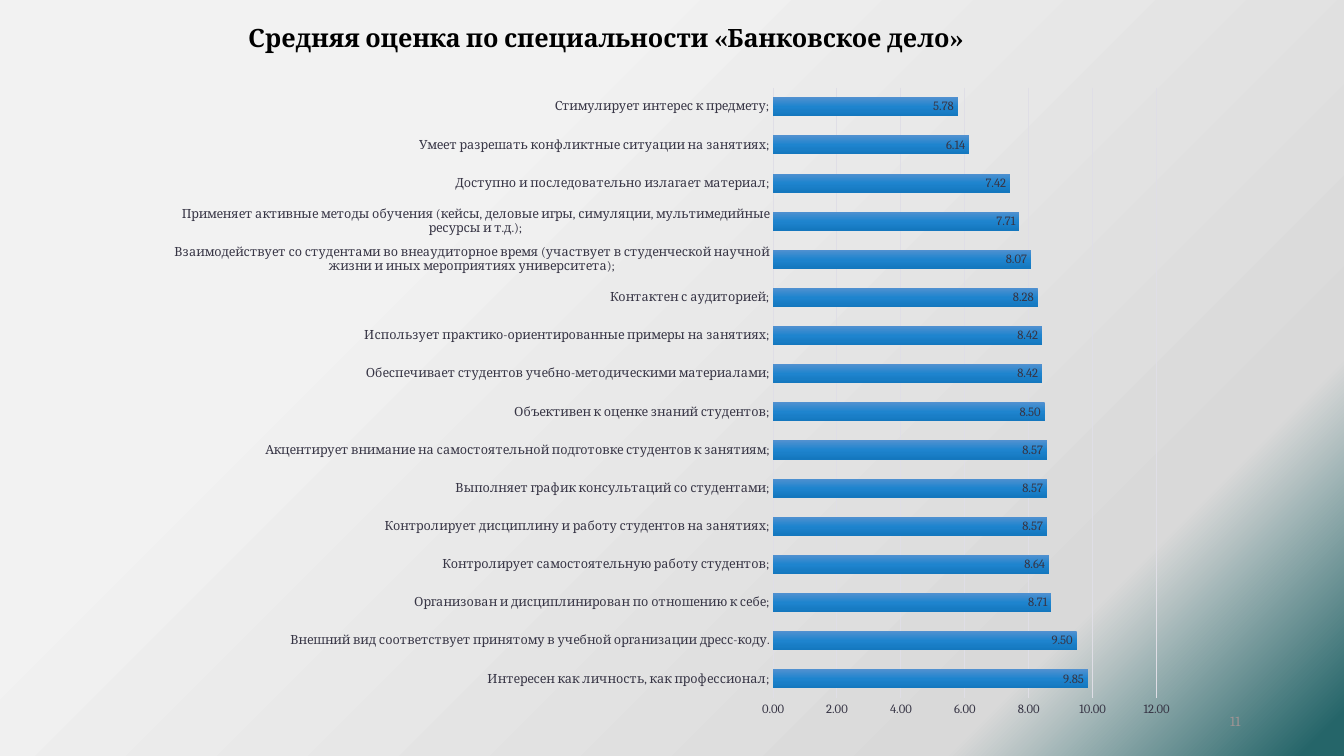
from pptx import Presentation
from pptx.chart.data import CategoryChartData
from pptx.dml.color import RGBColor
from pptx.enum.chart import XL_CHART_TYPE, XL_LABEL_POSITION, XL_TICK_MARK
from pptx.enum.text import MSO_ANCHOR, PP_ALIGN
from pptx.oxml import parse_xml
from pptx.oxml.ns import nsdecls
from pptx.util import Inches, Pt

FONT = "Cambria"
TEXT_COLOR = "373545"
GRID_COLOR = "DFDEE6"
SCORE_FORMAT = "0.00"

SCORES = [
    ("Интересен как личность, как профессионал;", 9.85),
    ("Внешний вид соответствует принятому в учебной организации дресс-коду.", 9.5),
    ("Организован и дисциплинирован по отношению к себе;", 8.71),
    ("Контролирует самостоятельную работу студентов;", 8.64),
    ("Контролирует дисциплину и работу студентов на занятиях;", 8.57),
    ("Выполняет график консультаций со студентами;", 8.57),
    ("Акцентирует внимание на самостоятельной подготовке студентов к занятиям;", 8.57),
    ("Объективен к оценке знаний студентов;", 8.5),
    ("Обеспечивает студентов учебно-методическими материалами;", 8.42),
    ("Использует практико-ориентированные примеры на занятиях;", 8.42),
    ("Контактен с аудиторией;", 8.28),
    ("Взаимодействует со студентами во внеаудиторное время (участвует в студенческой "
     "научной жизни и иных мероприятиях университета);", 8.07),
    ("Применяет активные методы обучения (кейсы, деловые игры, симуляции, "
     "мультимедийные ресурсы и т.д.);", 7.71),
    ("Доступно и последовательно излагает материал;", 7.42),
    ("Умеет разрешать конфликтные ситуации на занятиях;", 6.14),
    ("Стимулирует интерес к предмету;", 5.78),
]


def rgb(color):
    return RGBColor.from_string(color)


def style_font(font, size, color=TEXT_COLOR, bold=False):
    font.name = FONT
    font.size = Pt(size)
    font.bold = bold
    font.color.rgb = rgb(color)


def style_line(line, color):
    line.color.rgb = rgb(color)
    line.width = Pt(0.75)


def gradient_xml(stops, direction):
    stop_xml = "".join(
        f'<a:gs pos="{percent * 1000}"><a:srgbClr val="{color}"/></a:gs>'
        for percent, color in stops
    )
    return (f'<a:gradFill {nsdecls("a")} rotWithShape="1">'
            f"<a:gsLst>{stop_xml}</a:gsLst>{direction}</a:gradFill>")


def set_background(slide):
    gradient = gradient_xml(
        [(1, "F2F2F2"), (29, "F2F2F2"), (81, "D9D9D9"), (98, "256569")],
        '<a:path path="circle"><a:fillToRect r="100000" b="100000"/></a:path>',
    )
    background = parse_xml(
        f'<p:bg {nsdecls("p")}><p:bgPr>{gradient}'
        f'<a:effectLst {nsdecls("a")}/></p:bgPr></p:bg>'
    )
    slide.element.cSld.insert(0, background)


def write_text(shape, text, size, color, align, bold=False):
    frame = shape.text_frame
    frame.text = text
    frame.word_wrap = True
    frame.vertical_anchor = MSO_ANCHOR.MIDDLE
    paragraph = frame.paragraphs[0]
    paragraph.alignment = align
    paragraph.line_spacing = 0.9
    style_font(paragraph.runs[0].font, size, color, bold)


def add_title(slide, text):
    title = slide.shapes.title
    title.left, title.top = Inches(0.33), Inches(0.19)
    title.width, title.height = Inches(11.36), Inches(0.41)
    write_text(title, text, 18, "000000", PP_ALIGN.CENTER, bold=True)


def add_page_number(slide, number):
    page_number = slide.shapes.add_textbox(
        Inches(11.4), Inches(7), Inches(1), Inches(0.33))
    write_text(page_number, number, 10, "A09494", PP_ALIGN.RIGHT)


def style_axis(axis):
    axis.major_tick_mark = axis.minor_tick_mark = XL_TICK_MARK.NONE
    style_font(axis.tick_labels.font, 9)


def add_score_chart(slide):
    data = CategoryChartData(number_format=SCORE_FORMAT)
    data.categories = [criterion for criterion, _ in SCORES]
    data.add_series("Series 1", [score for _, score in SCORES])
    chart = slide.shapes.add_chart(
        XL_CHART_TYPE.BAR_CLUSTERED,
        Inches(1.5), Inches(0.74), Inches(10.28), Inches(6.51), data,
    ).chart
    chart.has_legend = chart.has_title = False
    style_font(chart.font, 10, "000000")

    # Axes
    criteria_axis, score_axis = chart.category_axis, chart.value_axis
    style_axis(criteria_axis)
    style_line(criteria_axis.format.line, GRID_COLOR)
    style_axis(score_axis)
    score_axis.format.line.fill.background()
    score_axis.minimum_scale, score_axis.maximum_scale = 0, 12
    score_axis.major_unit = 2
    score_axis.tick_labels.number_format = SCORE_FORMAT
    score_axis.tick_labels.number_format_is_linked = False
    style_line(score_axis.major_gridlines.format.line, GRID_COLOR)

    # Bars and their labels
    bars = chart.plots[0]
    bars.vary_by_categories = False
    bars.gap_width = 100
    bars.series[0].format.fill.background()
    bar_format = chart.element.xpath("//c:ser/c:spPr")[0]
    bar_format.replace(bar_format[0], parse_xml(gradient_xml(
        [(0, "5191D0"), (50, "1E84CE"), (100, "1477BE")],
        '<a:lin ang="5400000" scaled="0"/>')))
    labels = bars.series[0].data_labels
    labels.show_value = True
    labels.position = XL_LABEL_POSITION.INSIDE_END
    labels.number_format = SCORE_FORMAT
    labels.number_format_is_linked = False
    style_font(labels.font, 9)

    # Plot area leaves room for the long criteria
    plot_area = chart.element.xpath("//c:plotArea")[0]
    for old_layout in plot_area.xpath("c:layout"):
        plot_area.remove(old_layout)
    place = "".join(f'<c:{key} val="{value}"/>' for key, value in [
        ("layoutTarget", "inner"), ("xMode", "edge"), ("yMode", "edge"),
        ("x", 0.6), ("y", 0.02), ("w", 0.37), ("h", 0.93)])
    plot_area.insert(0, parse_xml(
        f'<c:layout {nsdecls("c")}><c:manualLayout>{place}</c:manualLayout></c:layout>'))


def main():
    deck = Presentation()
    deck.slide_width, deck.slide_height = Inches(13.33), Inches(7.5)
    slide = deck.slides.add_slide(deck.slide_layouts[5])
    set_background(slide)
    add_title(slide, "Средняя оценка по специальности «Банковское дело»")
    add_score_chart(slide)
    add_page_number(slide, "11")
    deck.save("out.pptx")


if __name__ == "__main__":
    main()
